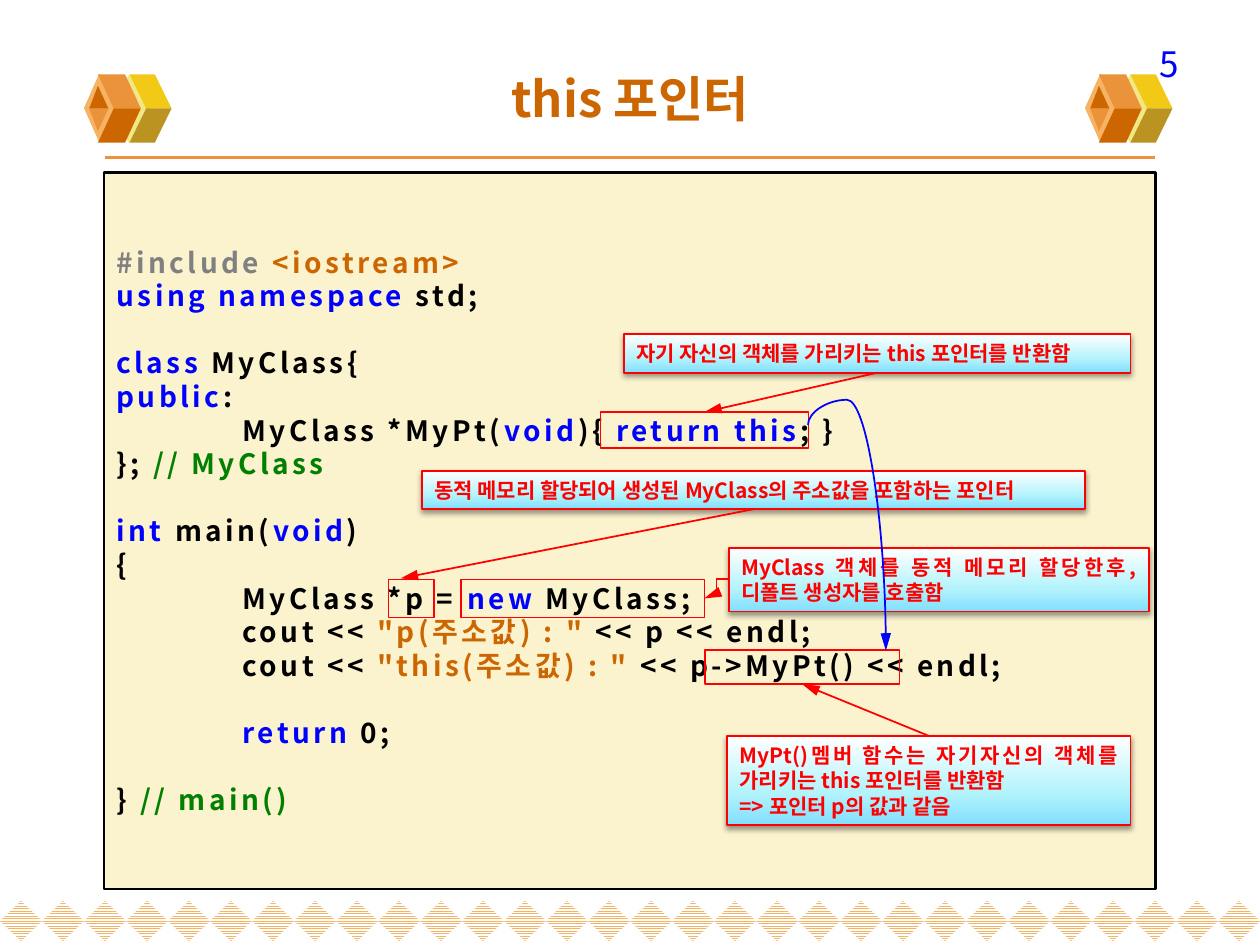
from lxml import etree
from pptx import Presentation
from pptx.dml.color import RGBColor
from pptx.enum.dml import MSO_PATTERN
from pptx.enum.shapes import MSO_CONNECTOR as Link, MSO_SHAPE as Shape
from pptx.enum.text import MSO_ANCHOR as Anchor, PP_ALIGN as Align
from pptx.oxml import parse_xml
from pptx.oxml.ns import nsdecls, qn
from pptx.util import Pt

COLORS = {
    "white": "FFFFFF", "black": "000000", "red": "FF0000", "blue": "0000FF",
    "gray": "808080", "green": "008000", "rust": "CC6600", "orange": "EB933B",
    "peach": "F5B363", "lemon": "F1E785", "gold": "F3C917", "olive": "BB9321",
    "cream": "FBF2CE", "sky": "81DEFF", "ice": "B2F3FC",
}
FONT = "Noto Sans CJK KR"

# Each code line is a list of (text, colour) spans; None is a one-line gap
CODE = [
    [("#include ", "gray"), ("<iostream>", "rust")],
    [("using namespace", "blue"), (" std;", "black")],
    None,
    [("class ", "blue"), ("MyClass{", "black")],
    [("public", "blue"), (":", "black")],
    [("\tMyClass *MyPt(", "black"), ("void", "blue"), ("){ ", "black"),
     ("return this", "blue"), ("; }", "black")],
    [("}; ", "black"), ("// MyClass", "green")],
    None,
    [("int ", "blue"), ("main(", "black"), ("void", "blue"), (")", "black")],
    [("{", "black")],
    [("\tMyClass *p = ", "black"), ("new ", "blue"), ("MyClass;", "black")],
    [("\tcout << ", "black"), ('"p(주소값) : " ', "rust"), ("<< p << endl;", "black")],
    [("\tcout << ", "black"), ('"this(주소값) : " ', "rust"),
     ("<< p->MyPt() << endl;", "black")],
    None,
    [("\treturn ", "blue"), ("0;", "black")],
    None,
    [("} ", "black"), ("// main()", "green")],
]


def rgb(name):
    return RGBColor.from_string(COLORS[name])


class Painter:
    """Holds the style and the page being drawn."""

    def __init__(self, page):
        self.page = page
        self.shapes = page.shapes

    def style(self, para, size, color=None, bold=True, align=Align.LEFT, spacing=None):
        para.alignment = align
        font = para.font
        font.size, font.bold, font.name = Pt(size), bold, FONT
        if color:
            font.color.rgb = rgb(color)
        props = para._p.pPr.find(qn("a:defRPr"))
        props.set("kern", "0")
        etree.SubElement(props, qn("a:ea")).set("typeface", FONT)
        if spacing:
            props.set("spc", str(spacing * 100))

    def tab_stop(self, para, position):
        props = para._p.pPr
        props.find(qn("a:defRPr")).addprevious(parse_xml(
            f'<a:tabLst {nsdecls("a")}><a:tab pos="{Pt(position)}" algn="l"/></a:tabLst>'))

    def paint(self, shape, fill=None, line=None, width=1):
        shape.shadow.inherit = False
        if fill:
            shape.fill.solid()
            shape.fill.fore_color.rgb = rgb(fill)
        else:
            shape.fill.background()
        if line:
            shape.line.color.rgb = rgb(line)
            shape.line.width = Pt(width)
        else:
            shape.line.fill.background()
        return shape

    def box(self, area, fill=None, line=None, width=1, kind=Shape.RECTANGLE):
        shape = self.shapes.add_shape(kind, *map(Pt, area))
        return self.paint(shape, fill, line, width)

    def face(self, points, fill):
        first, *rest = [(Pt(x), Pt(y)) for x, y in points]
        builder = self.shapes.build_freeform(*first)
        builder.add_line_segments(rest)
        self.paint(builder.convert_to_shape(), fill)

    def cube(self, left):
        middle = 62

        def pair(points, upper, lower):
            for sign, fill in ((-1, upper), (1, lower)):
                self.face([(left + x, middle + sign * y) for x, y in points], fill)

        self.box((left + 14, 42.5, 24, 39.5), "lemon", kind=Shape.DIAMOND)
        pair([(35.5, 0), (50, 0), (40.5, 19.5), (26, 19.5)], "gold", "olive")
        self.box((left, 42, 17.5, 39.5), "peach", kind=Shape.DIAMOND)
        pair([(17, 0), (32.5, 0), (23.5, 19.5), (8, 19.5)], "orange", "rust")
        pair([(8, 13), (3, 0), (14, 0)], "rust", "orange")

    def border(self, count):
        step = 720 / count
        for index in range(count):
            gem = self.box((index * step, 514.8, step, 23), kind=Shape.DIAMOND)
            gem.fill.patterned()
            gem.fill.pattern = MSO_PATTERN.NARROW_HORIZONTAL
            gem.fill.fore_color.rgb = rgb("peach")
            gem.fill.back_color.rgb = rgb("white")

    def title(self, text):
        holder = self.shapes.title
        holder.left, holder.top, holder.width, holder.height = map(Pt, (36, 21.5, 648, 68.5))
        frame = holder.text_frame
        frame.text = text
        frame.vertical_anchor = Anchor.MIDDLE
        self.style(frame.paragraphs[0], 28, "rust", align=Align.CENTER)

    def label(self, area, text, size, color):
        frame = self.shapes.add_textbox(*map(Pt, area)).text_frame
        frame.word_wrap = True
        frame.text = text
        self.style(frame.paragraphs[0], size, color, bold=False, align=Align.RIGHT)

    def listing(self, area, lines, pitch=19.2):
        frame = self.box(area, "cream", "black", 1.5).text_frame
        frame.word_wrap = True
        frame.vertical_anchor = Anchor.MIDDLE
        para, gap = frame.paragraphs[0], False
        for line in lines:
            if line is None:
                gap = True
                continue
            if para.runs:
                para = frame.add_paragraph()
            para.line_spacing = Pt(pitch)
            if gap:
                para.space_before = Pt(pitch)
            gap = False
            self.style(para, 16, spacing=2)
            self.tab_stop(para, 72)
            for text, color in line:
                span = para.add_run()
                span.text = text
                span.font.color.rgb = rgb(color)

    def callout(self, area, *texts):
        shape = self.box(area, "sky", "red")
        stops = "".join(
            f'<a:gs pos="{at * 1000}"><a:srgbClr val="{COLORS[name]}"/></a:gs>'
            for at, name in ((0, "sky"), (35, "ice"), (100, "white")))
        props = shape._element.spPr
        props.replace(props.find(qn("a:solidFill")), parse_xml(
            f'<a:gradFill {nsdecls("a")} rotWithShape="1"><a:gsLst>{stops}</a:gsLst>'
            '<a:lin ang="16200000" scaled="1"/></a:gradFill>'))
        props.find(qn("a:effectLst")).append(parse_xml(
            f'<a:outerShdw {nsdecls("a")} blurRad="40000" dist="20000" dir="5400000" '
            f'rotWithShape="0"><a:srgbClr val="{COLORS["black"]}"><a:alpha val="38000"/>'
            '</a:srgbClr></a:outerShdw>'))
        frame = shape.text_frame
        frame.word_wrap = True
        frame.vertical_anchor = Anchor.TOP
        frame.text = "\n".join(texts)
        for para in frame.paragraphs:
            para.line_spacing = Pt(14.6)
            self.style(para, 12, "red", align=Align.JUSTIFY)
        return shape

    def link(self, start, end, color, width=1, kind=Link.STRAIGHT, arrow=True):
        line = self.shapes.add_connector(kind, *map(Pt, (*start, *end)))
        line.line.color.rgb = rgb(color)
        line.line.width = Pt(width)
        if arrow:
            head = etree.SubElement(line.line._get_or_add_ln(), qn("a:tailEnd"))
            head.set("type", "triangle")
            head.set("len", "lg")
        etree.SubElement(line._element.spPr, qn("a:effectLst"))
        return line


def main():
    deck = Presentation()
    deck.slide_width, deck.slide_height = Pt(720), Pt(540)
    painter = Painter(deck.slides.add_slide(deck.slide_layouts[5]))

    # Page decoration and heading
    painter.border(30)
    painter.link((60, 90), (660, 90), "orange", 2.25, arrow=False)
    for left in (48, 620):
        painter.cube(left)
    painter.label((513, 20.5, 168, 22), "5", 20, "blue")
    painter.title("this 포인터")

    # Code with marked expressions
    painter.listing((59.5, 98.5, 601, 409.5), CODE)
    return_mark, pointer_mark, call_mark, new_mark = [
        painter.box(area, line="red", width=width) for area, width in (
            ((343, 235.5, 119, 20.5), 0.75), ((222, 331, 26, 22), 0.75),
            ((403, 371.5, 111, 19.5), 1), ((263.5, 331, 139, 22), 0.75))]

    # Explanations
    self_note = painter.callout(
        (356.5, 191, 289.5, 22), "자기 자신의 객체를 가리키는 this 포인터를 반환함")
    address_note = painter.callout(
        (241, 269, 379, 22), "동적 메모리 할당되어 생성된 MyClass의 주소값을 포함하는 포인터")
    result_note = painter.callout(
        (415.5, 420.5, 230.5, 51),
        "MyPt()멤버 함수는 자기자신의 객체를 가리키는 this 포인터를 반환함",
        "=> 포인터 p의 값과 같음")

    # Arrows from explanations to code
    arrow = painter.link((530.75, 420.5), (458.5, 391), "red")
    arrow.begin_connect(result_note, 0)
    arrow.end_connect(call_mark, 2)
    arrow = painter.link((501.25, 213), (402.5, 235.5), "red")
    arrow.begin_connect(self_note, 2)
    arrow.end_connect(return_mark, 0)
    arrow = painter.link((430.5, 291), (229, 330.5), "red")
    arrow.begin_connect(address_note, 2)
    painter.callout((416.5, 313, 240, 36.5),
                    "MyClass 객체를 동적 메모리 할당한후, 디폴트 생성자를 호출함")
    painter.link((416.5, 331), (402.5, 342), "red", kind=Link.ELBOW)

    # Curve from the returned pointer to the call, turned a quarter to start upward
    curve = painter.link((548.5, 285), (419.5, 329.5), "blue", kind=Link.CURVE)
    props = curve._element.spPr
    props.find(qn("a:xfrm")).set("rot", "16200000")
    guide = etree.SubElement(props.find(qn("a:prstGeom")).find(qn("a:avLst")), qn("a:gd"))
    guide.set("name", "adj1")
    guide.set("fmla", "val -11100")

    deck.save("out.pptx")


if __name__ == "__main__":
    main()
